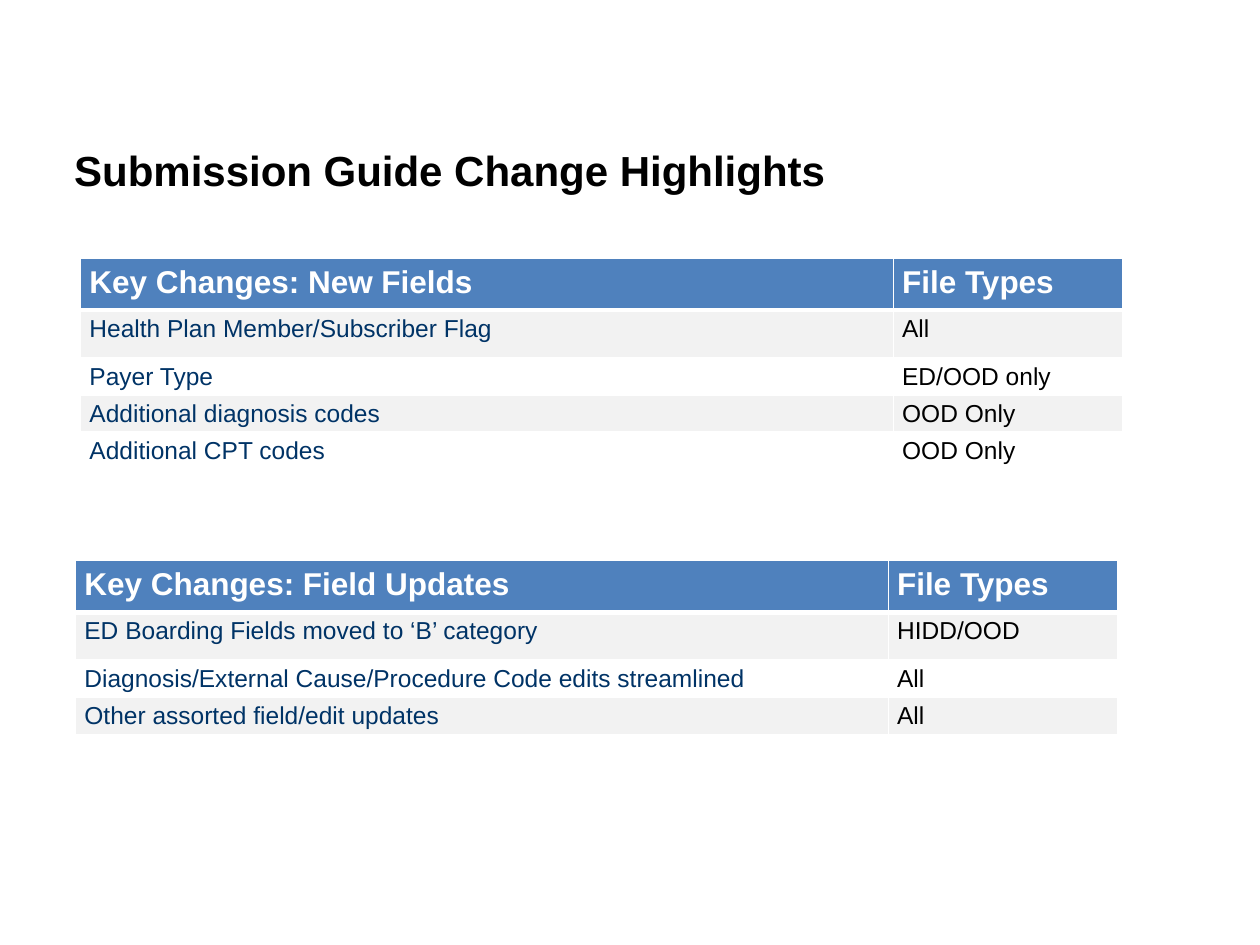
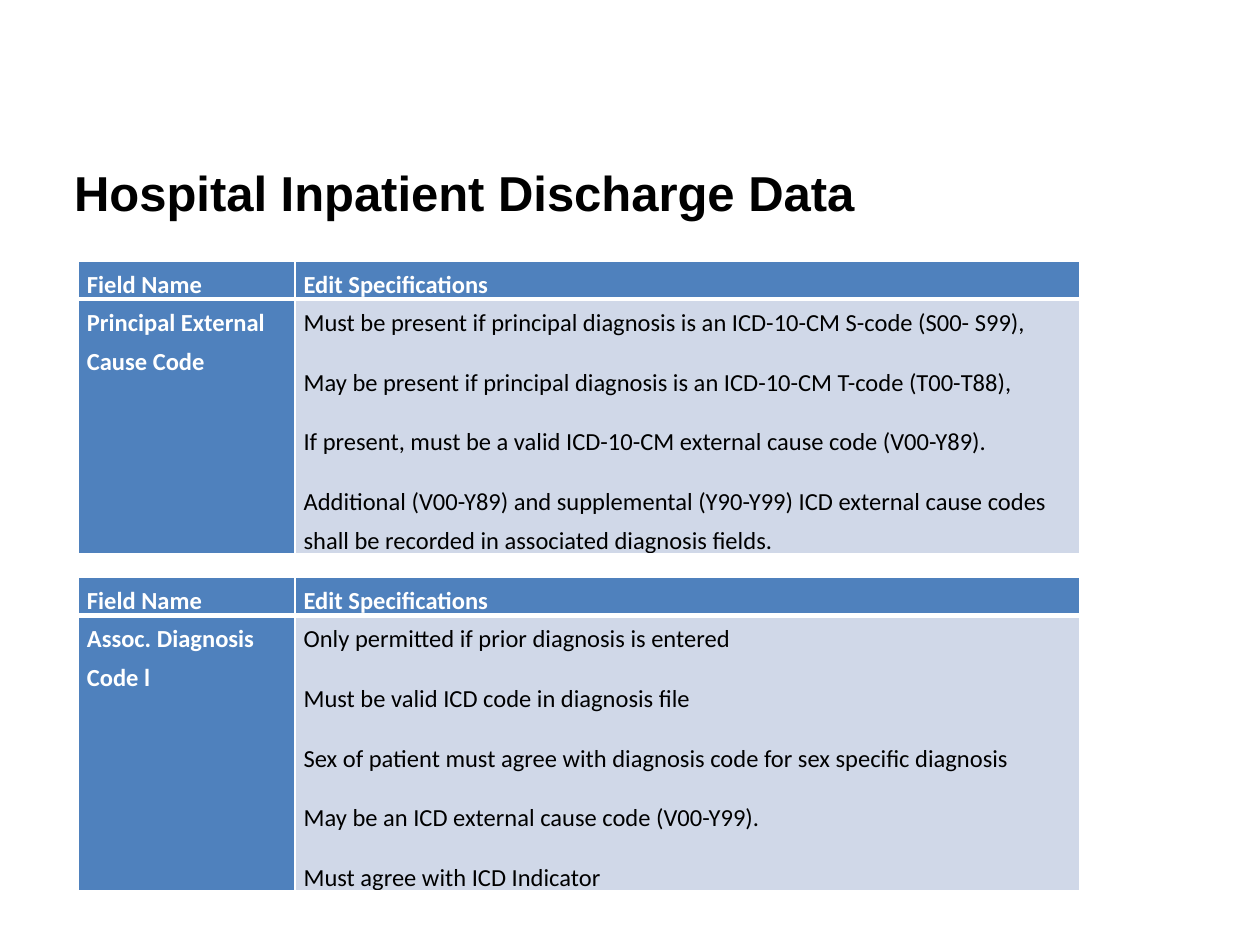
from lxml.etree import SubElement
from pptx import Presentation
from pptx.dml.color import RGBColor
from pptx.enum.text import MSO_ANCHOR
from pptx.oxml.ns import qn
from pptx.util import Inches, Pt

# Colours
BLACK = RGBColor(0x00, 0x00, 0x00)
WHITE = RGBColor(0xFF, 0xFF, 0xFF)
NAVY = RGBColor(0x00, 0x33, 0x66)
BLUE = RGBColor(0x4F, 0x81, 0xBD)
PALE_BLUE = RGBColor(0xD0, 0xD8, 0xE8)
PALE_GREY = RGBColor(0xF2, 0xF2, 0xF2)

# Content
CHANGES_TITLE = "Submission Guide Change Highlights"
NEW_FIELDS = [
    ("Key Changes: New Fields", "File Types"),
    ("Health Plan Member/Subscriber Flag", "All"),
    ("Payer Type", "ED/OOD only"),
    ("Additional diagnosis codes", "OOD Only"),
    ("Additional CPT codes", "OOD Only"),
]
FIELD_UPDATES = [
    ("Key Changes: Field Updates", "File Types"),
    ("ED Boarding Fields moved to ‘B’ category", "HIDD/OOD"),
    ("Diagnosis/External Cause/Procedure Code edits streamlined", "All"),
    ("Other assorted field/edit updates", "All"),
]
DISCHARGE_TITLE = "Hospital Inpatient Discharge Data"
EDIT_HEADER = ("Field Name", "Edit Specifications")
CAUSE_CODE = [
    EDIT_HEADER,
    ("Principal External Cause Code", [
        "Must be present if principal diagnosis is an ICD-10-CM S-code (S00- S99),",
        "May be present if principal diagnosis is an ICD-10-CM T-code (T00-T88),",
        "If present, must be a valid ICD-10-CM external cause code (V00-Y89).",
        "Additional (V00-Y89) and supplemental (Y90-Y99) ICD external cause codes "
        "shall be recorded in associated diagnosis fields.",
    ]),
]
DIAGNOSIS_CODE = [
    EDIT_HEADER,
    ("Assoc. Diagnosis Code l", [
        "Only permitted if prior diagnosis is entered",
        "Must be valid ICD code in diagnosis file",
        "Sex of patient must agree with diagnosis code for sex specific diagnosis",
        "May be an ICD external cause code (V00-Y99).",
        "Must agree with ICD Indicator",
    ]),
]

# Formats
TITLE_FONT = {"name": "Arial", "bold": True}
CHANGE_SPACING = {"line_spacing": 1.15, "space_after": Pt(10)}
EDIT_SPACING = {"line_spacing": 1.3, "space_before": Pt(3), "space_after": Pt(9)}
TITLE_LEFT, TITLE_TOP = 0.49, 1.17
THIN, THICK = 1, 3


def set_all(target, values):
    for name, value in values.items():
        setattr(target, name, value)


def write(frame, lines, font, colour, spacing):
    """Write one paragraph per line in a single format."""
    for index, line in enumerate(lines):
        para = frame.paragraphs[0] if index == 0 else frame.add_paragraph()
        set_all(para, spacing)
        if index == 0:
            para.space_before = Pt(0)
        span = para.add_run()
        span.text = line
        set_all(span.font, font)
        span.font.color.rgb = colour


def add_title(page, text, width, height, size):
    box = page.shapes.add_textbox(Inches(TITLE_LEFT), Inches(TITLE_TOP),
                                  Inches(width), Inches(height))
    box.text_frame.word_wrap = True
    box.text_frame.vertical_anchor = MSO_ANCHOR.MIDDLE
    write(box.text_frame, [text], {**TITLE_FONT, "size": Pt(size)}, BLACK, {})


def add_borders(cell, row):
    """White rules, thick between the header and the body."""
    widths = {"L": THIN, "R": THIN, "T": THICK if row == 1 else THIN,
              "B": THICK if row == 0 else THIN}
    properties = cell._tc.get_or_add_tcPr()
    for side, width in widths.items():
        line = SubElement(properties, qn(f"a:ln{side}"), w=str(Pt(width)))
        fill = SubElement(line, qn("a:solidFill"))
        SubElement(fill, qn("a:srgbClr"), val=str(WHITE))


def change_style(row, column):
    """Fill, text colour and font of a key change cell."""
    if row == 0:
        return BLUE, WHITE, {"name": "Arial", "size": Pt(18), "bold": True}
    fill = PALE_GREY if row % 2 else None
    return fill, (NAVY, BLACK)[column], {"name": "Arial", "size": Pt(14), "bold": False}


def edit_style(row, column):
    """Fill, text colour and font of an edit specification cell."""
    heading = row == 0 or column == 0
    font = {"name": "Calibri", "size": Pt(14), "bold": heading}
    return (BLUE, WHITE, font) if heading else (PALE_BLUE, BLACK, font)


def add_grid(page, rows, left, top, columns, heights, style, spacing, inset_top):
    frame = page.shapes.add_table(len(rows), len(columns), Inches(left), Inches(top),
                                  Inches(sum(columns)), Inches(sum(heights)))
    table = frame.table
    table.first_row = table.horz_banding = False
    for column, width in zip(table.columns, columns):
        column.width = Inches(width)
    margins = {"margin_left": Inches(0.07), "margin_right": Inches(0.07),
               "margin_top": Inches(inset_top), "margin_bottom": 0}
    for r, texts in enumerate(rows):
        table.rows[r].height = Inches(heights[r])
        for c, text in enumerate(texts):
            cell = table.cell(r, c)
            fill, colour, font = style(r, c)
            set_all(cell, margins)
            add_borders(cell, r)
            if fill is None:
                cell.fill.background()
            else:
                cell.fill.solid()
                cell.fill.fore_color.rgb = fill
            lines = [text] if isinstance(text, str) else text
            write(cell.text_frame, lines, font, colour, spacing)


def main():
    deck = Presentation()
    deck.slide_width, deck.slide_height = Inches(10), Inches(7.5)
    blank = deck.slide_layouts[6]

    # Key changes
    page = deck.slides.add_slide(blank)
    add_title(page, CHANGES_TITLE, 8.38, 0.35, 24)
    for rows, left, top in ((FIELD_UPDATES, 0.6, 4.45), (NEW_FIELDS, 0.64, 2.05)):
        heights = [0.41, 0.38] + [0.295] * (len(rows) - 2)
        add_grid(page, rows, left, top, (6.45, 1.82), heights,
                 change_style, CHANGE_SPACING, 0.01)

    # Edit specifications
    page = deck.slides.add_slide(blank)
    add_title(page, DISCHARGE_TITLE, 8.79, 0.7, 28)
    for rows, top, body in ((CAUSE_CODE, 2.07, 2.02), (DIAGNOSIS_CODE, 4.58, 2.19)):
        add_grid(page, rows, 0.62, top, (1.72, 6.23), (0.3, body),
                 edit_style, EDIT_SPACING, 0)

    deck.save("out.pptx")


if __name__ == "__main__":
    main()
